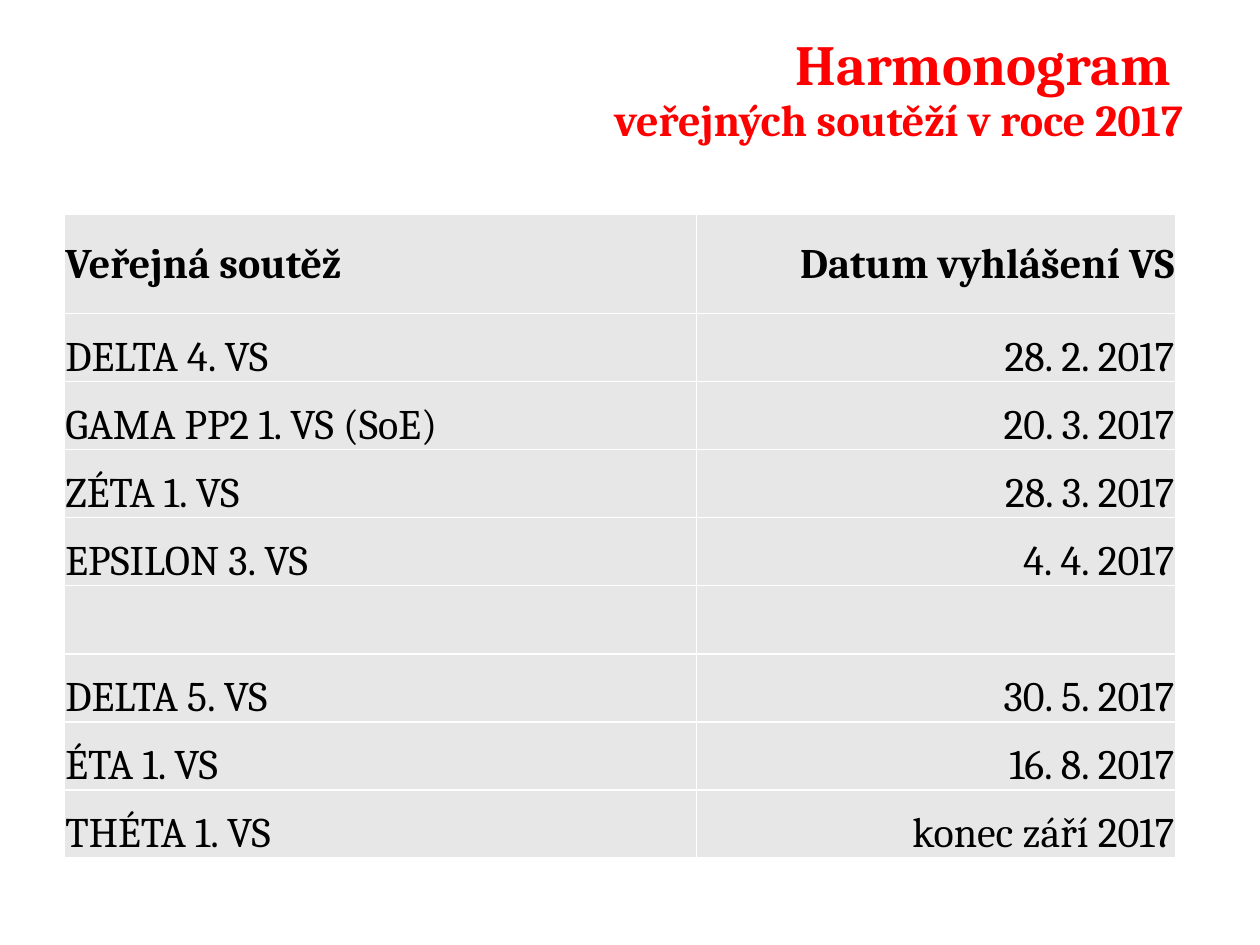
from lxml.etree import SubElement
from pptx import Presentation
from pptx.dml.color import RGBColor
from pptx.enum.text import MSO_ANCHOR as Anchor, MSO_AUTO_SIZE as AutoSize, PP_ALIGN as Align
from pptx.oxml.ns import qn
from pptx.util import Inches, Pt

FONT = "Cambria"
RED, BLACK, WHITE, GREY = "FF0000", "000000", "FFFFFF", "E7E7E7"
COLUMN_WIDTHS = [5.02, 3.8]
HEADER_HEIGHT, ROW_HEIGHT = 0.79, 0.54
SCHEDULE = [
    ("Veřejná soutěž", "Datum vyhlášení VS"),
    ("DELTA 4. VS", "28. 2. 2017"),
    ("GAMA PP2 1. VS (SoE)", "20. 3. 2017"),
    ("ZÉTA 1. VS", "28. 3. 2017"),
    ("EPSILON 3. VS", "4. 4. 2017"),
    ("", ""),
    ("DELTA 5. VS", "30. 5. 2017"),
    ("ÉTA 1. VS", "16. 8. 2017"),
    ("THÉTA 1. VS", "konec září 2017"),
]


def rgb(color):
    return RGBColor.from_string(color)


def style_font(font, size, color, bold=False):
    font.name = FONT
    font.size = Pt(size)
    font.bold = bold
    font.color.rgb = rgb(color)


def add_title(s):
    title = s.shapes.title
    title.left, title.top = Inches(2.95), Inches(0.29)
    title.width, title.height = Inches(6.54), Inches(0.87)
    tf = title.text_frame
    tf.word_wrap = True
    tf.auto_size = AutoSize.NONE
    tf.vertical_anchor = Anchor.MIDDLE
    tf.text = "Harmonogram\v veřejných soutěží v roce 2017".replace("\v ", " \v")
    p = tf.paragraphs[0]
    p.alignment = Align.RIGHT
    p.line_spacing = 0.9
    for r, size in zip(p.runs, (32.4, 25.2)):
        style_font(r.font, size, RED, bold=True)


def set_borders(cell, color, width):
    """Draw all four cell borders; they must precede the fill in the XML."""
    tc_pr = cell._tc.get_or_add_tcPr()
    for side in ("a:lnL", "a:lnR", "a:lnT", "a:lnB"):
        ln = SubElement(tc_pr, qn(side), w=str(Pt(width)))
        fill = SubElement(ln, qn("a:solidFill"))
        SubElement(fill, qn("a:srgbClr"), val=color)


def fill_cell(cell, text, is_header, align):
    set_borders(cell, WHITE, 1)
    cell.fill.solid()
    cell.fill.fore_color.rgb = rgb(GREY)
    if not text:
        return
    cell.margin_left = cell.margin_right = cell.margin_top = Inches(0.01)
    cell.margin_bottom = 0
    cell.vertical_anchor = Anchor.MIDDLE if is_header else Anchor.BOTTOM
    cell.text = text
    p = cell.text_frame.paragraphs[0]
    p.alignment = align
    style_font(p.runs[0].font, 24, BLACK, bold=is_header)


def add_schedule(s):
    heights = [HEADER_HEIGHT] + [ROW_HEIGHT] * (len(SCHEDULE) - 1)
    table = s.shapes.add_table(
        len(heights), len(COLUMN_WIDTHS), Inches(0.51), Inches(1.7),
        Inches(sum(COLUMN_WIDTHS)), Inches(sum(heights))).table
    for column, width in zip(table.columns, COLUMN_WIDTHS):
        column.width = Inches(width)
    for i, (height, texts) in enumerate(zip(heights, SCHEDULE)):
        table.rows[i].height = Inches(height)
        for cell, text, align in zip(table.rows[i].cells, texts, (Align.LEFT, Align.RIGHT)):
            fill_cell(cell, text, i == 0, align)


def main():
    prs = Presentation()
    prs.slide_width, prs.slide_height = Inches(10), Inches(7.5)
    s = prs.slides.add_slide(prs.slide_layouts[5])
    add_title(s)
    add_schedule(s)
    prs.save("out.pptx")


if __name__ == "__main__":
    main()
